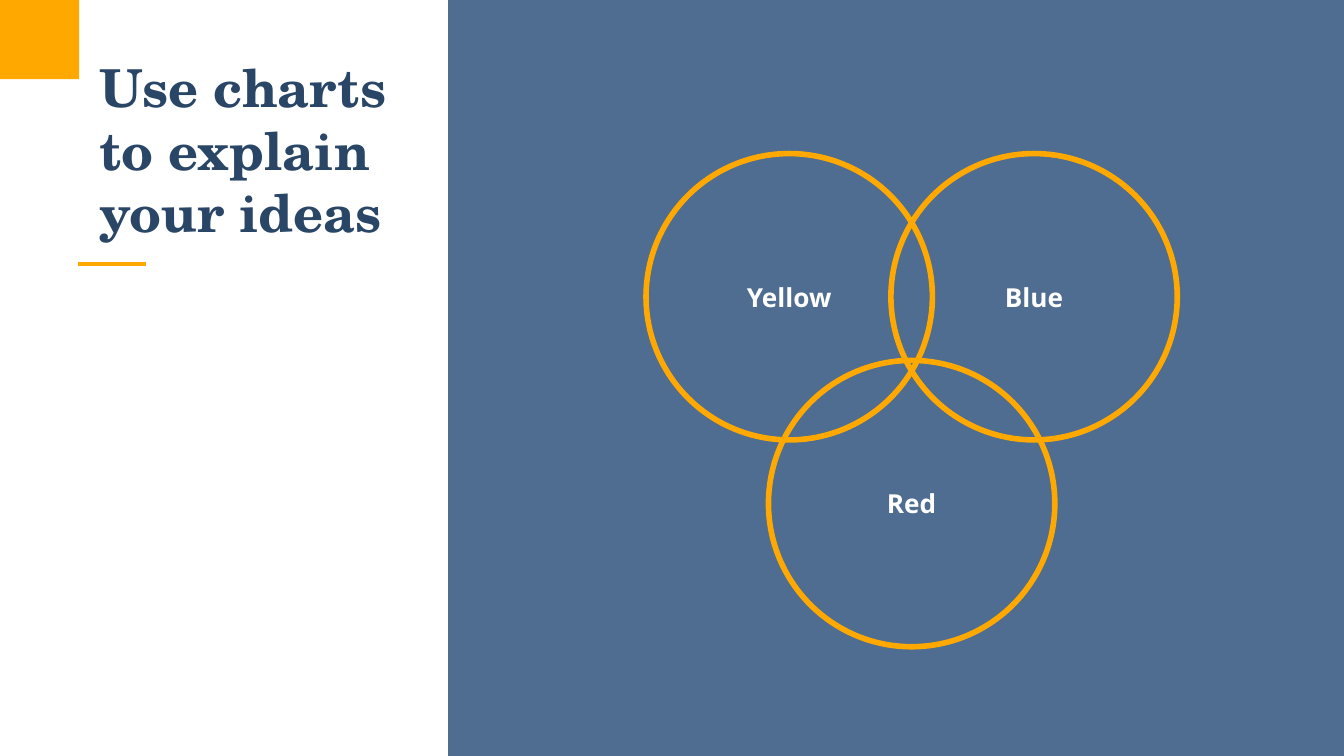
from lxml import etree
from pptx import Presentation
from pptx.dml.color import RGBColor
from pptx.enum.shapes import MSO_CONNECTOR, MSO_SHAPE
from pptx.enum.text import MSO_ANCHOR, MSO_AUTO_SIZE, PP_ALIGN
from pptx.oxml.ns import qn
from pptx.util import Pt

RECTANGLE, OVAL = MSO_SHAPE.RECTANGLE, MSO_SHAPE.OVAL
STRAIGHT = MSO_CONNECTOR.STRAIGHT
LEFT, CENTER = PP_ALIGN.LEFT, PP_ALIGN.CENTER
BOTTOM, MIDDLE = MSO_ANCHOR.BOTTOM, MSO_ANCHOR.MIDDLE
NO_AUTOFIT = MSO_AUTO_SIZE.NONE

COLORS = {"panel": "325680", "accent": "FFA800", "title": "294667", "label": "FFFFFF"}
TITLE_ONLY = 5
WIDTH, HEIGHT = 720, 405
INSET = 7.2


def color(name):
    return RGBColor.from_string(COLORS[name])


def write_text(shape, text, *, font, size, color_name, align, anchor):
    frame = shape.text_frame
    frame.word_wrap = True
    frame.auto_size = NO_AUTOFIT
    frame.vertical_anchor = anchor
    frame.margin_left = frame.margin_right = Pt(INSET)
    frame.margin_top = frame.margin_bottom = Pt(INSET)
    paragraph = frame.paragraphs[0]
    paragraph.alignment = align
    run = paragraph.add_run()
    run.text = text
    run.font.name = font
    run.font.size = Pt(size)
    run.font.bold = True
    run.font.color.rgb = color(color_name)


class SlideBuilder:
    title_font = "TeX Gyre Schola"
    body_font = "Open Sans"

    def __init__(self, slide):
        self.slide = slide

    def title(self, text, left, top, width, height):
        shape = self.slide.shapes.title
        shape.left, shape.top = Pt(left), Pt(top)
        shape.width, shape.height = Pt(width), Pt(height)
        write_text(shape, text, font=self.title_font, size=28,
                   color_name="title", align=LEFT, anchor=BOTTOM)

    def shape(self, kind, left, top, width, height):
        shape = self.slide.shapes.add_shape(
            kind, Pt(left), Pt(top), Pt(width), Pt(height))
        shape.shadow.inherit = False
        return shape

    def block(self, left, top, width, height, color_name, opacity=100):
        shape = self.shape(RECTANGLE, left, top, width, height)
        shape.fill.solid()
        shape.fill.fore_color.rgb = color(color_name)
        shape.line.fill.background()
        if opacity < 100:
            fill_color = shape.fill._xPr.find(qn("a:solidFill"))[0]
            etree.SubElement(fill_color, qn("a:alpha"), val=str(opacity * 1000))

    def rule(self, left, right, y):
        line = self.slide.shapes.add_connector(STRAIGHT, Pt(left), Pt(y), Pt(right), Pt(y))
        line.line.color.rgb = color("accent")
        line.line.width = Pt(2.25)
        etree.SubElement(line._element.spPr, qn("a:effectLst"))

    def circle(self, text, center_x, center_y, diameter):
        shape = self.shape(OVAL, center_x - diameter / 2, center_y - diameter / 2,
                           diameter, diameter)
        shape.fill.background()
        shape.line.color.rgb = color("accent")
        shape.line.width = Pt(3)
        write_text(shape, text, font=self.body_font, size=14,
                   color_name="label", align=CENTER, anchor=MIDDLE)


def main():
    presentation = Presentation()
    presentation.slide_width, presentation.slide_height = Pt(WIDTH), Pt(HEIGHT)
    slide = presentation.slides.add_slide(presentation.slide_layouts[TITLE_ONLY])
    builder = SlideBuilder(slide)

    # Panel and accents
    builder.block(WIDTH / 3, 0, WIDTH * 2 / 3, HEIGHT, "panel", opacity=86)
    builder.rule(42, 78, 141.3)
    builder.block(0, 0, 42.4, 42.4, "accent")

    # Title
    builder.title("Use charts to explain your ideas", 46, 26.6, 169, 111)

    # Venn diagram: columns step evenly, Red sits on the lower row
    first_x, step_x = 422.8, 65.6
    upper_y, lower_y = 159, 269.8
    rows = [("Yellow", upper_y), ("Red", lower_y), ("Blue", upper_y)]
    for column, (text, center_y) in enumerate(rows):
        builder.circle(text, first_x + column * step_x, center_y, 153.4)

    presentation.save("out.pptx")


if __name__ == "__main__":
    main()
